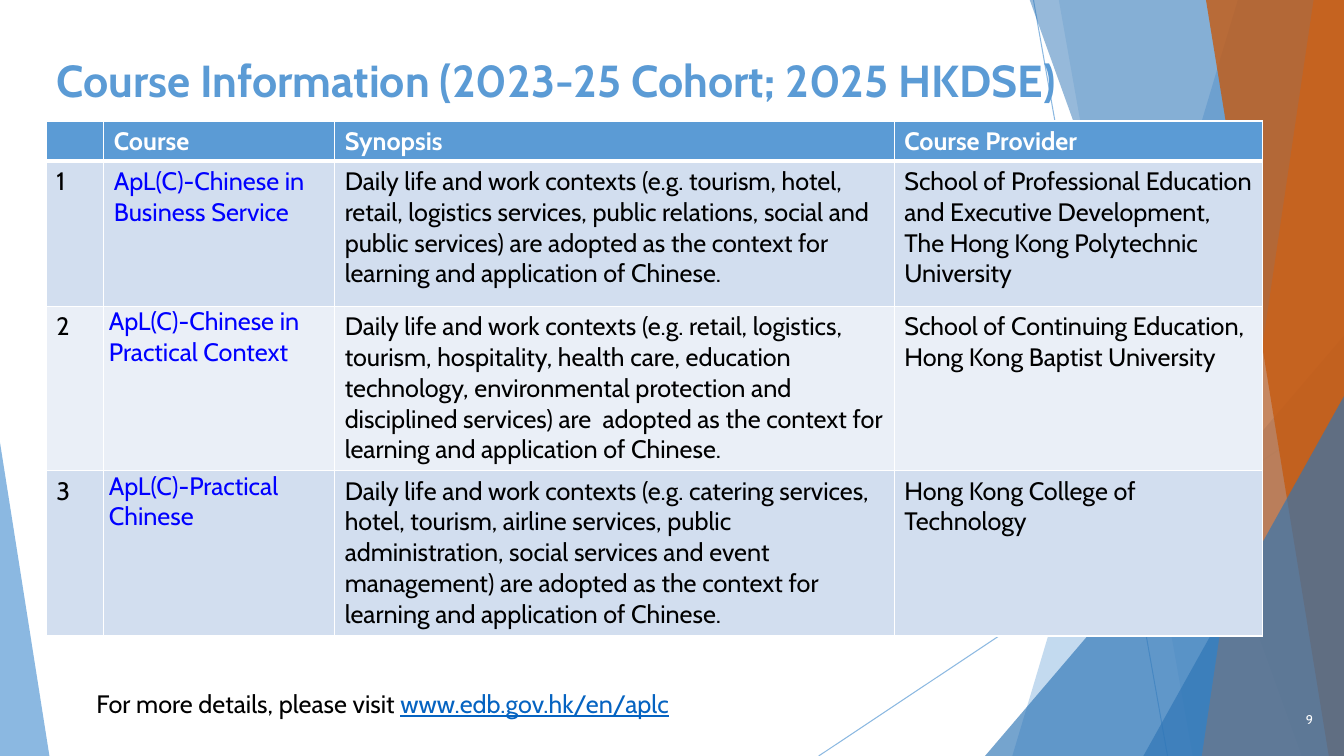
from pptx import Presentation
from pptx.dml.color import RGBColor
from pptx.enum.shapes import MSO_CONNECTOR, MSO_SHAPE
from pptx.enum.text import MSO_ANCHOR, PP_ALIGN
from pptx.oxml.ns import qn
from pptx.util import Inches, Pt
from lxml import etree

STRAIGHT = MSO_CONNECTOR.STRAIGHT
TRIANGLE = MSO_SHAPE.ISOSCELES_TRIANGLE
TOP, MIDDLE = MSO_ANCHOR.TOP, MSO_ANCHOR.MIDDLE
LEFT, CENTER, RIGHT = PP_ALIGN.LEFT, PP_ALIGN.CENTER, PP_ALIGN.RIGHT

FONT = "Cabin"
BLUE = RGBColor(0x5B, 0x9B, 0xD5)
DARK_BLUE = RGBColor(0x2E, 0x75, 0xB6)
ORANGE = RGBColor(0xED, 0x7D, 0x31)
RUST = RGBColor(0xC5, 0x5A, 0x11)
BAND_DARK = RGBColor(0xD2, 0xDE, 0xEF)
BAND_LIGHT = RGBColor(0xEA, 0xEF, 0xF7)
COURSE_BLUE = RGBColor(0x00, 0x00, 0xFF)
LINK_BLUE = RGBColor(0x05, 0x63, 0xC1)
BLACK = RGBColor(0, 0, 0)
WHITE = RGBColor(0xFF, 0xFF, 0xFF)

# Content
TITLE = "Course Information (2023-25 Cohort; 2025 HKDSE)"
HEADER = ("", "Course", "Synopsis", "Course Provider")
COURSES = [
    ("1", "ApL(C)-Chinese in Business Service",
     "Daily life and work contexts (e.g. tourism, hotel, retail, logistics services, "
     "public relations, social and public services) are adopted as the context for "
     "learning and application of Chinese.",
     "School of Professional Education and Executive Development, "
     "The Hong Kong Polytechnic University"),
    ("2", "ApL(C)-Chinese in\nPractical Context",
     "Daily life and work contexts (e.g. retail, logistics, tourism, hospitality, "
     "health care, education technology, environmental protection and disciplined "
     "services) are  adopted as the context for learning and application of Chinese.",
     "School of Continuing Education, Hong Kong Baptist University"),
    ("3", "ApL(C)-Practical\nChinese",
     "Daily life and work contexts (e.g. catering services, hotel, tourism, airline "
     "services, public administration, social services and event management) are "
     "adopted as the context for learning and application of Chinese.",
     "Hong Kong College of Technology"),
]
COLUMN_WIDTHS = (0.57, 2.29, 5.55, 3.65)
ROW_HEIGHTS = (0.4, 1.44, 1.63, 1.64)
DETAILS = ("For more details, please visit ", "www.edb.gov.hk/en/aplc")
PAGE_NUMBER = "9"

# Background facets, back to front
SLIDE_W, SLIDE_H, BLEED = 13.33, 7.5, -0.01
RAYS = [((10.25, 0), (11.58, SLIDE_H)), ((SLIDE_W, 4.03), (8.12, SLIDE_H))]
# Bands reach the right edge: (top x, bottom x, colour, opacity %)
# Triangles: (left, top, width, height, apex, colour, opacity %)
FACETS = [
    (12.28, 10.04, BLUE, 36),
    (10.5, 11.83, BLUE, 20),
    (9.77, 3.33, 3.56, 4.17, 1, DARK_BLUE, 66),
    (10.21, 12.91, DARK_BLUE, 50),
    (13.03, 11.92, ORANGE, 70),
    (11.96, 13.18, RUST, 80),
    (11.34, 3.93, 1.99, 3.57, 1, DARK_BLUE, 66),
    (0, 4.39, 0.49, 3.11, 0, BLUE, 70),
]

prs = Presentation()
prs.slide_width, prs.slide_height = Inches(SLIDE_W), Inches(SLIDE_H)
slide = prs.slides.add_slide(prs.slide_layouts[6])
shapes = slide.shapes


def set_opacity(properties, percent):
    for color in properties.iter(qn("a:srgbClr")):
        etree.SubElement(color, qn("a:alpha"), val=str(percent * 1000))


def style(run, size, color, bold=False):
    run.font.name, run.font.size, run.font.bold = FONT, Pt(size), bold
    run.font.color.rgb = color


def add_text(box, pieces, align=LEFT, anchor=TOP):
    """Pieces are (text, size, colour, bold) and form one paragraph."""
    frame = shapes.add_textbox(*map(Inches, box)).text_frame
    frame.word_wrap, frame.vertical_anchor = True, anchor
    paragraph = frame.paragraphs[0]
    paragraph.alignment = align
    for text, *look in pieces:
        run = paragraph.add_run()
        run.text = text
        style(run, *look)
    return paragraph


def set_borders(cell, top, bottom):
    properties = cell._tc.get_or_add_tcPr()
    for side, width in (("L", 1), ("R", 1), ("T", top), ("B", bottom)):
        line = etree.SubElement(properties, qn(f"a:ln{side}"), w=str(Pt(width)))
        fill = etree.SubElement(line, qn("a:solidFill"))
        etree.SubElement(fill, qn("a:srgbClr"), val=str(WHITE))


# Thin rays
for (x1, y1), (x2, y2) in RAYS:
    ray = shapes.add_connector(STRAIGHT, *map(Inches, (x1, y1, x2, y2)))
    ray.line.color.rgb, ray.line.width = BLUE, Pt(0.75)
    properties = ray._element.spPr
    set_opacity(properties, 70)
    etree.SubElement(properties, qn("a:effectLst"))

# Bands and triangles
for *geometry, color, opacity in FACETS:
    if len(geometry) == 2:
        top_x, bottom_x = geometry
        builder = shapes.build_freeform(Inches(top_x), Inches(BLEED))
        corners = ((SLIDE_W, BLEED), (SLIDE_W, SLIDE_H), (bottom_x, SLIDE_H))
        builder.add_line_segments([(Inches(x), Inches(y)) for x, y in corners])
        facet = builder.convert_to_shape()
    else:
        *box, apex = geometry
        facet = shapes.add_shape(TRIANGLE, *map(Inches, box))
        facet.adjustments[0] = apex
    facet.shadow.inherit = False
    facet.fill.solid()
    facet.fill.fore_color.rgb = color
    facet.line.fill.background()
    set_opacity(facet._element.spPr, opacity)

# Title
add_text((0.46, 0.47, 11.71, 1.44), [(TITLE, 32, BLUE, True)])

# Course table
courses = shapes.add_table(
    len(ROW_HEIGHTS), len(COLUMN_WIDTHS), Inches(0.46), Inches(1.2),
    Inches(sum(COLUMN_WIDTHS)), Inches(sum(ROW_HEIGHTS))).table
for column, width in zip(courses.columns, COLUMN_WIDTHS):
    column.width = Inches(width)
for r, (height, texts) in enumerate(zip(ROW_HEIGHTS, [HEADER] + COURSES)):
    courses.rows[r].height = Inches(height)
    is_header = r == 0
    band = BLUE if is_header else (BAND_LIGHT, BAND_DARK)[r % 2]
    for c, text in enumerate(texts):
        cell = courses.cell(r, c)
        set_borders(cell, 3 if r == 1 else 1, 3 if is_header else 1)
        cell.fill.solid()
        cell.fill.fore_color.rgb = band
        if "\n" in text:
            cell.margin_left = Inches(0.05)
            cell.margin_top = cell.margin_right = cell.margin_bottom = 0
        cell.text_frame.text = text
        color = WHITE if is_header else COURSE_BLUE if c == 1 else BLACK
        for paragraph in cell.text_frame.paragraphs:
            paragraph.font.size = Pt(18)
            for run in paragraph.runs:
                style(run, 18, color, is_header)

# Footer
details = add_text((0.14, 6.78, 7.31, 0.4),
                   [(DETAILS[0], 18, BLACK), (DETAILS[1], 18, LINK_BLUE)], CENTER)
details.runs[1].font.underline = True
add_text((12.37, 6.94, 0.75, 0.4), [(PAGE_NUMBER, 9, WHITE)], RIGHT, MIDDLE)

prs.save("out.pptx")
